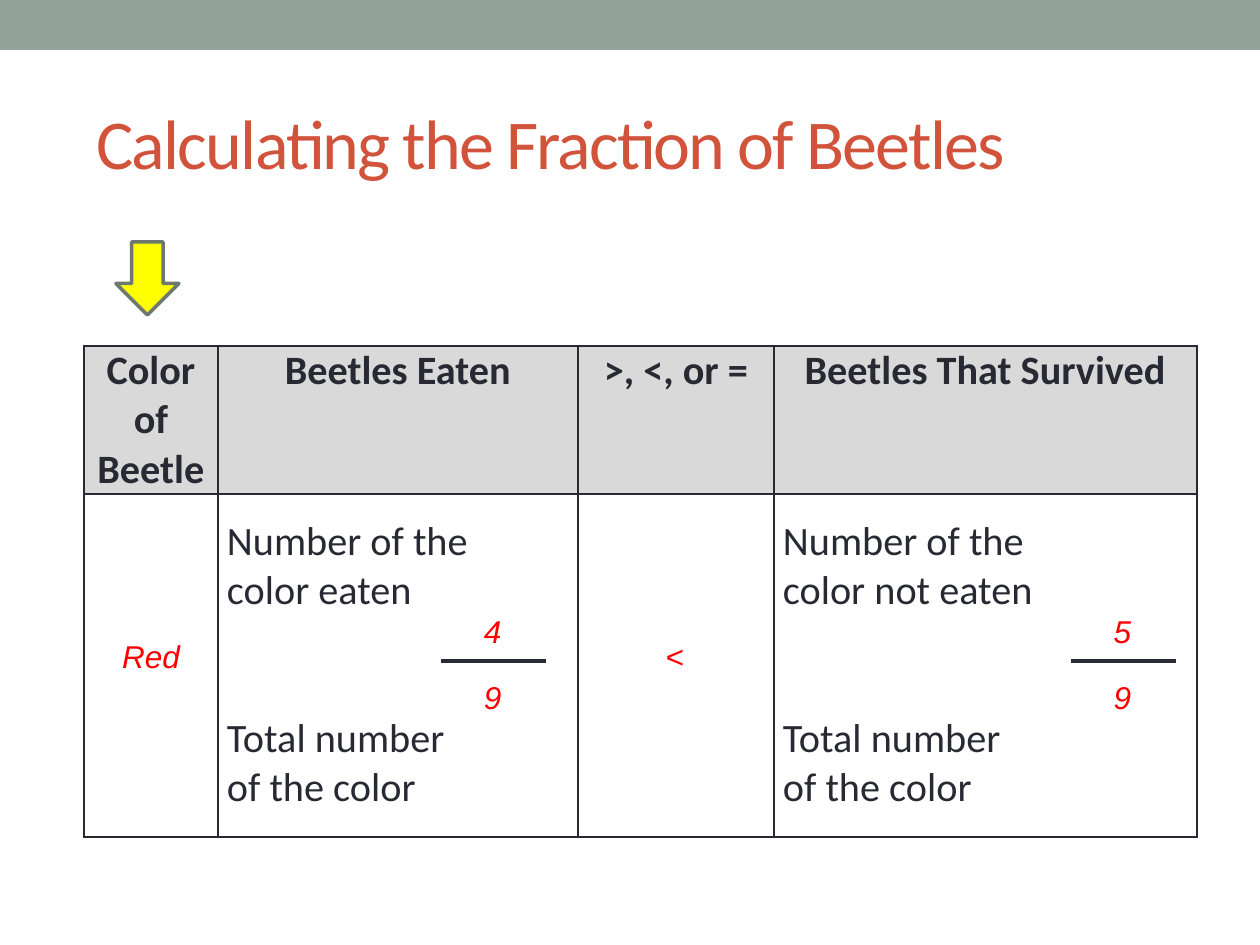
from lxml.etree import SubElement
from pptx import Presentation
from pptx.dml.color import RGBColor
from pptx.enum.shapes import MSO_CONNECTOR, MSO_SHAPE
from pptx.enum.text import MSO_ANCHOR, PP_ALIGN
from pptx.oxml.ns import qn
from pptx.util import Emu, Pt

EMU_PER_PX = 914400 // 126
COLORS = {
    "band": "93A299", "title": "D2533C", "ink": "292934", "header": "D9D9D9",
    "answer": "FF0000", "arrow": "FFFF00", "arrow_line": "6D7871",
}


def px(length):
    return Emu(length * EMU_PER_PX)


def color(name):
    return RGBColor.from_string(COLORS[name])


def write(para, text, size=23, font="Calibri", ink="ink", bold=False, italic=False,
          align=PP_ALIGN.LEFT, before=0, spacing=None):
    """Put one formatted span into a paragraph; before and spacing are in points."""
    para.alignment = align
    para.space_before = Pt(before)
    span = para.add_run()
    span.text = text
    span.font.size = Pt(size)
    span.font.name = font
    span.font.bold = bold
    span.font.italic = italic
    span.font.color.rgb = color(ink)
    if spacing is not None:
        span.font._element.set("spc", str(spacing * 100))


class SlideBuilder:
    def __init__(self, page):
        self.shapes = page.shapes

    def shape(self, kind, left, top, width, height, fill, line=None, weight=2):
        shape = self.shapes.add_shape(kind, px(left), px(top), px(width), px(height))
        shape.shadow.inherit = False
        shape.fill.solid()
        shape.fill.fore_color.rgb = color(fill)
        if line:
            shape.line.color.rgb = color(line)
            shape.line.width = Pt(weight)
        else:
            shape.line.fill.background()

    def text(self, text, left, top, width, height, wrap=True,
             anchor=MSO_ANCHOR.TOP, **style):
        box = self.shapes.add_textbox(px(left), px(top), px(width), px(height))
        frame = box.text_frame
        frame.word_wrap = wrap
        frame.vertical_anchor = anchor
        write(frame.paragraphs[0], text, **style)

    def answer(self, text, center, top):
        width = 84 if len(text) > 1 else 43
        self.text(text, center - width // 2, top, width, 50, wrap=False, size=18,
                  font="Arial", ink="answer", italic=True, align=PP_ALIGN.CENTER)

    def line(self, left, right, y):
        line = self.shapes.add_connector(
            MSO_CONNECTOR.STRAIGHT, px(left), px(y), px(right), px(y))
        line.line.color.rgb = color("ink")
        line.line.width = Pt(2.25)
        SubElement(line._element.spPr, qn("a:effectLst"))

    def fraction(self, top_number, bottom_number, left):
        self.line(left, left + 105, 661)
        self.answer(top_number, left + 51, 606)
        self.answer(bottom_number, left + 51, 672)

    def table(self, left, top, widths, heights):
        table = self.shapes.add_table(
            len(heights), len(widths), px(left), px(top),
            px(sum(widths)), px(sum(heights))).table
        for column, width in zip(table.columns, widths):
            column.width = px(width)
        for row, height in zip(table.rows, heights):
            row.height = px(height)
        for cell in table.iter_cells():
            cell.margin_left = cell.margin_right = px(9)
            cell.margin_top = cell.margin_bottom = 0
            self.borders(cell)
            cell.fill.background()
        return table

    def borders(self, cell):
        properties = cell._tc.get_or_add_tcPr()
        for side in ("lnL", "lnR", "lnT", "lnB"):
            border = SubElement(properties, qn(f"a:{side}"), w=str(Pt(1)))
            fill = SubElement(border, qn("a:solidFill"))
            SubElement(fill, qn("a:srgbClr"), val=COLORS["ink"])

    def header_cell(self, cell, text):
        cell.fill.solid()
        cell.fill.fore_color.rgb = color("header")
        write(cell.text_frame.paragraphs[0], text, bold=True, align=PP_ALIGN.CENTER)

    def fraction_cell(self, cell, counted):
        """Describe the numerator and, after a two-line gap, the denominator."""
        cell.margin_top = px(23)
        frame = cell.text_frame
        lines = (("Number of the", 0), (counted, 0),
                 ("Total number", 56), ("of the color", 0))
        for index, (text, before) in enumerate(lines):
            para = frame.add_paragraph() if index else frame.paragraphs[0]
            write(para, text, before=before)


def main():
    deck = Presentation()
    deck.slide_width, deck.slide_height = px(1260), px(945)
    slide = SlideBuilder(deck.slides.add_slide(deck.slide_layouts[6]))

    slide.shape(MSO_SHAPE.RECTANGLE, 0, 0, 1260, 50, "band")
    slide.text("Calculating the Fraction of Beetles", 84, 73, 1113, 136,
               anchor=MSO_ANCHOR.MIDDLE, size=40, ink="title", spacing=-1)

    table = slide.table(84, 346, widths=(134, 360, 196, 423), heights=(148, 343))
    headers = ("Color of Beetle", "Beetles Eaten", ">, <, or =", "Beetles That Survived")
    for column, text in enumerate(headers):
        slide.header_cell(table.cell(0, column), text)
    slide.fraction_cell(table.cell(1, 1), "color eaten")
    slide.fraction_cell(table.cell(1, 3), "color not eaten")

    slide.fraction("4", "9", 441)
    slide.fraction("5", "9", 1071)
    slide.shape(MSO_SHAPE.DOWN_ARROW, 116, 242, 63, 73, "arrow", line="arrow_line")
    slide.answer("Red", 151, 631)
    slide.answer("<", 674, 631)

    deck.save("out.pptx")


if __name__ == "__main__":
    main()
